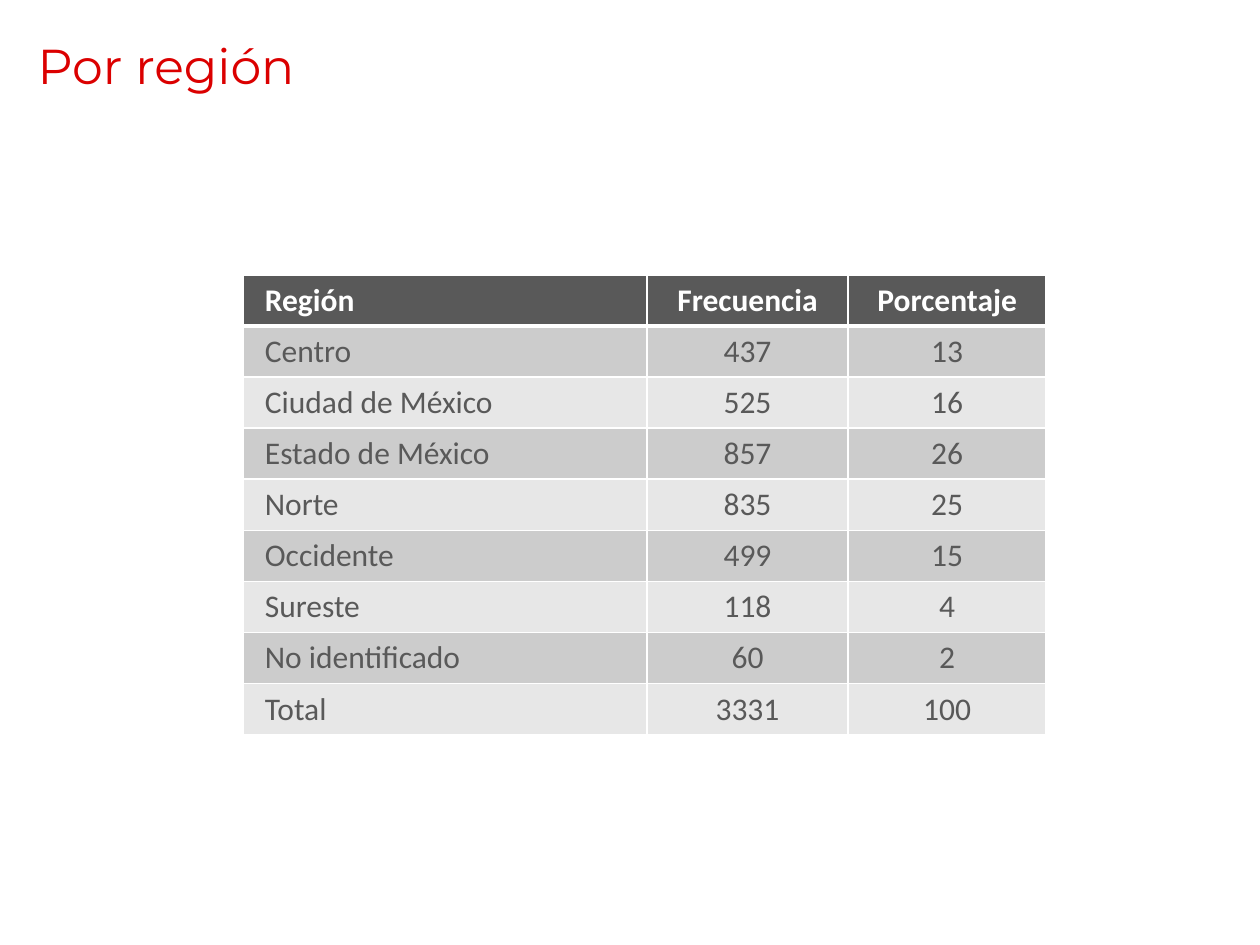
from dataclasses import dataclass

from lxml.etree import SubElement
from pptx import Presentation
from pptx.dml.color import RGBColor
from pptx.enum.text import MSO_ANCHOR as Anchor, PP_ALIGN as Align
from pptx.oxml.ns import qn
from pptx.util import Cm, Pt


@dataclass(frozen=True)
class Theme:
    title_font: str = "Montserrat"
    table_font: str = "Calibri"
    title_size: int = 28
    table_size: int = 18
    red: str = "DB0000"
    dark: str = "595959"
    white: str = "FFFFFF"
    bands: tuple = ("CCCCCC", "E7E7E7")
    rule: float = 1
    header_rule: float = 3


THEME = Theme()
COLUMN_WIDTHS = (8.13, 4.06, 3.99)
ROW_HEIGHT = 1.03
REGIONS = [
    ("Región", "Frecuencia", "Porcentaje"),
    ("Centro", 437, 13),
    ("Ciudad de México", 525, 16),
    ("Estado de México", 857, 26),
    ("Norte", 835, 25),
    ("Occidente", 499, 15),
    ("Sureste", 118, 4),
    ("No identificado", 60, 2),
    ("Total", 3331, 100),
]


def style_text(paragraph, font_name, size, color, bold=False):
    for run in paragraph.runs:
        font = run.font
        font.name, font.size, font.bold = font_name, Pt(size), bold
        font.color.rgb = RGBColor.from_string(color)


def add_title(slide, text):
    box = slide.shapes.add_textbox(Cm(0.51), Cm(0.25), Cm(19.23), Cm(2.11))
    frame = box.text_frame
    frame.word_wrap = True
    frame.vertical_anchor = Anchor.MIDDLE
    frame.text = text
    style_text(frame.paragraphs[0], THEME.title_font, THEME.title_size, THEME.red)


def set_borders(cell, top, bottom):
    """Draw white cell borders; top and bottom are widths in points."""
    properties = cell._tc.get_or_add_tcPr()
    widths = {"lnL": THEME.rule, "lnR": THEME.rule, "lnT": top, "lnB": bottom}
    for side, width in widths.items():
        line = SubElement(properties, qn(f"a:{side}"), w=str(Pt(width)))
        fill = SubElement(line, qn("a:solidFill"))
        SubElement(fill, qn("a:srgbClr"), val=THEME.white)


def fill_cell(cell, value, row, column):
    header = row == 0
    set_borders(
        cell,
        top=THEME.header_rule if row == 1 else THEME.rule,
        bottom=THEME.header_rule if header else THEME.rule,
    )
    cell.fill.solid()
    background = THEME.dark if header else THEME.bands[(row - 1) % 2]
    cell.fill.fore_color.rgb = RGBColor.from_string(background)
    cell.margin_left = cell.margin_right = Cm(0.43)
    cell.margin_top = cell.margin_bottom = Cm(0.13)
    cell.text_frame.text = str(value)
    paragraph = cell.text_frame.paragraphs[0]
    paragraph.alignment = Align.CENTER if column else Align.LEFT
    color = THEME.white if header else THEME.dark
    style_text(paragraph, THEME.table_font, THEME.table_size, color, bold=header)


def add_region_table(slide):
    table = slide.shapes.add_table(
        len(REGIONS), len(COLUMN_WIDTHS), Cm(4.91), Cm(5.54),
        Cm(sum(COLUMN_WIDTHS)), Cm(ROW_HEIGHT * len(REGIONS)),
    ).table
    for column, width in zip(table.columns, COLUMN_WIDTHS):
        column.width = Cm(width)
    for row, values in enumerate(REGIONS):
        table.rows[row].height = Cm(ROW_HEIGHT)
        for column, value in enumerate(values):
            fill_cell(table.cell(row, column), value, row, column)


def main():
    presentation = Presentation()
    presentation.slide_width, presentation.slide_height = Cm(25.4), Cm(19.05)
    slide = presentation.slides.add_slide(presentation.slide_layouts[6])
    add_title(slide, "Por región")
    add_region_table(slide)
    presentation.save("out.pptx")


if __name__ == "__main__":
    main()
